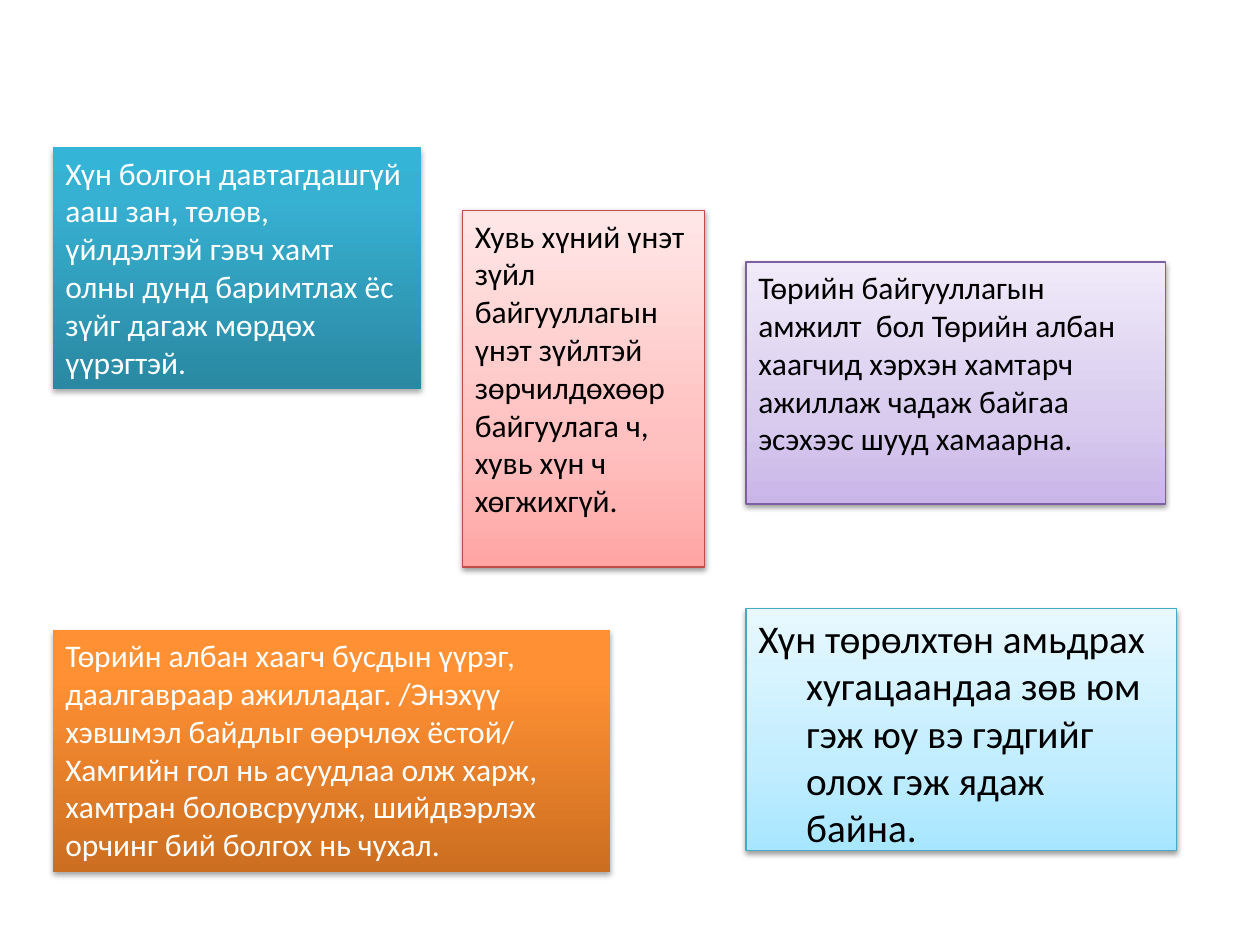
from lxml.etree import SubElement
from pptx import Presentation
from pptx.dml.color import RGBColor
from pptx.enum.shapes import MSO_SHAPE as SHAPE
from pptx.enum.text import MSO_ANCHOR as ANCHOR, PP_ALIGN as ALIGN
from pptx.oxml.ns import qn
from pptx.util import Inches, Pt

BLACK, WHITE = "000000", "FFFFFF"


def rgb(value):
    """Turn a hex string into a colour."""
    return RGBColor.from_string(value)


def set_gradient(sp, stops):
    """Fill a shape with (percent, colour) stops running from bottom to top."""
    sp.fill.gradient()
    sp.fill.gradient_angle = 90
    stop_list = sp._element.spPr.find(".//" + qn("a:gsLst"))
    stop_list.clear()
    for percent, color in stops:
        stop = SubElement(stop_list, qn("a:gs"), pos=str(percent * 1000))
        SubElement(stop, qn("a:srgbClr"), val=color)


def set_shadow(sp, distance, opacity):
    """Give a shape a soft black shadow straight below it."""
    sp.shadow.inherit = False
    effects = sp._element.spPr.find(qn("a:effectLst"))
    shadow = SubElement(effects, qn("a:outerShdw"), blurRad=str(Pt(3.15)),
                        dist=str(Pt(distance)), dir="5400000", rotWithShape="0")
    color = SubElement(shadow, qn("a:srgbClr"), val=BLACK)
    SubElement(color, qn("a:alpha"), val=str(opacity * 1000))


def add_card(slide, box, text, stops, color, size=18, hanging=0):
    """Add a gradient rectangle holding one left-aligned paragraph."""
    sp = slide.shapes.add_shape(SHAPE.RECTANGLE, *map(Inches, box))
    set_gradient(sp, stops)
    tf = sp.text_frame
    tf.word_wrap = True
    tf.vertical_anchor = ANCHOR.TOP
    tf.text = text
    p = tf.paragraphs[0]
    p.alignment = ALIGN.LEFT
    if hanging:
        pPr = p._p.get_or_add_pPr()
        pPr.set("marL", str(Inches(hanging)))
        pPr.set("indent", str(-Inches(hanging)))
    font = p.runs[0].font
    font.name, font.size = "Calibri", Pt(size)
    font.color.rgb = rgb(color)
    return sp


def add_bold_card(slide, box, text, colors):
    """Add a borderless strong-coloured card with white text."""
    sp = add_card(slide, box, text, zip((0, 80, 100), colors), WHITE)
    sp.line.fill.background()
    set_shadow(sp, 1.8, 35)


def add_pale_card(slide, box, text, colors, border, **text_style):
    """Add a bordered pale card with black text."""
    sp = add_card(slide, box, text, zip((0, 35, 100), colors), BLACK, **text_style)
    sp.line.color.rgb = rgb(border)
    sp.line.width = Pt(0.75)
    set_shadow(sp, 1.6, 38)


def main():
    """Build the slide and save it."""
    prs = Presentation()
    prs.slide_width, prs.slide_height = Inches(10), Inches(7.5)
    s = prs.slides.add_slide(prs.slide_layouts[6])
    add_pale_card(
        s, (5.92, 4.83, 3.42, 1.92),
        "Хүн төрөлхтөн амьдрах хугацаандаа зөв юм гэж юу вэ гэдгийг "
        "олох гэж ядаж байна.",
        ("A7E6FF", "C1EDFF", "E7F8FF"), "46AAC5", size=22.4, hanging=0.38)
    add_bold_card(
        s, (0.42, 1.17, 2.92, 1.92),
        "Хүн болгон давтагдашгүй ааш зан, төлөв, үйлдэлтэй гэвч хамт олны "
        "дунд баримтлах ёс зүйг дагаж мөрдөх үүрэгтэй.",
        ("2A88A2", "37B1D2", "34B4D6"))
    add_bold_card(
        s, (0.42, 5, 4.42, 1.92),
        "Төрийн албан хаагч бусдын үүрэг, даалгавраар ажилладаг. /Энэхүү "
        "хэвшмэл байдлыг өөрчлөх ёстой/ Хамгийн гол нь асуудлаа олж харж, "
        "хамтран боловсруулж, шийдвэрлэх орчинг бий болгох нь чухал.",
        ("CC6E20", "FF9034", "FF9136"))
    add_pale_card(
        s, (3.67, 1.67, 1.92, 2.83),
        "Хувь хүний үнэт зүйл байгууллагын үнэт зүйлтэй зөрчилдөхөөр "
        "байгуулага ч, хувь хүн ч хөгжихгүй.",
        ("FFA6A5", "FFC0BF", "FFE7E7"), "BF4C48")
    add_pale_card(
        s, (5.92, 2.08, 3.33, 1.92),
        "Төрийн байгууллагын амжилт  бол Төрийн албан хаагчид хэрхэн "
        "хамтарч ажиллаж чадаж байгаа эсэхээс шууд хамаарна.",
        ("C9B5E8", "D8CBEE", "F0EAF9"), "7D60A0")
    prs.save("out.pptx")


if __name__ == "__main__":
    main()
